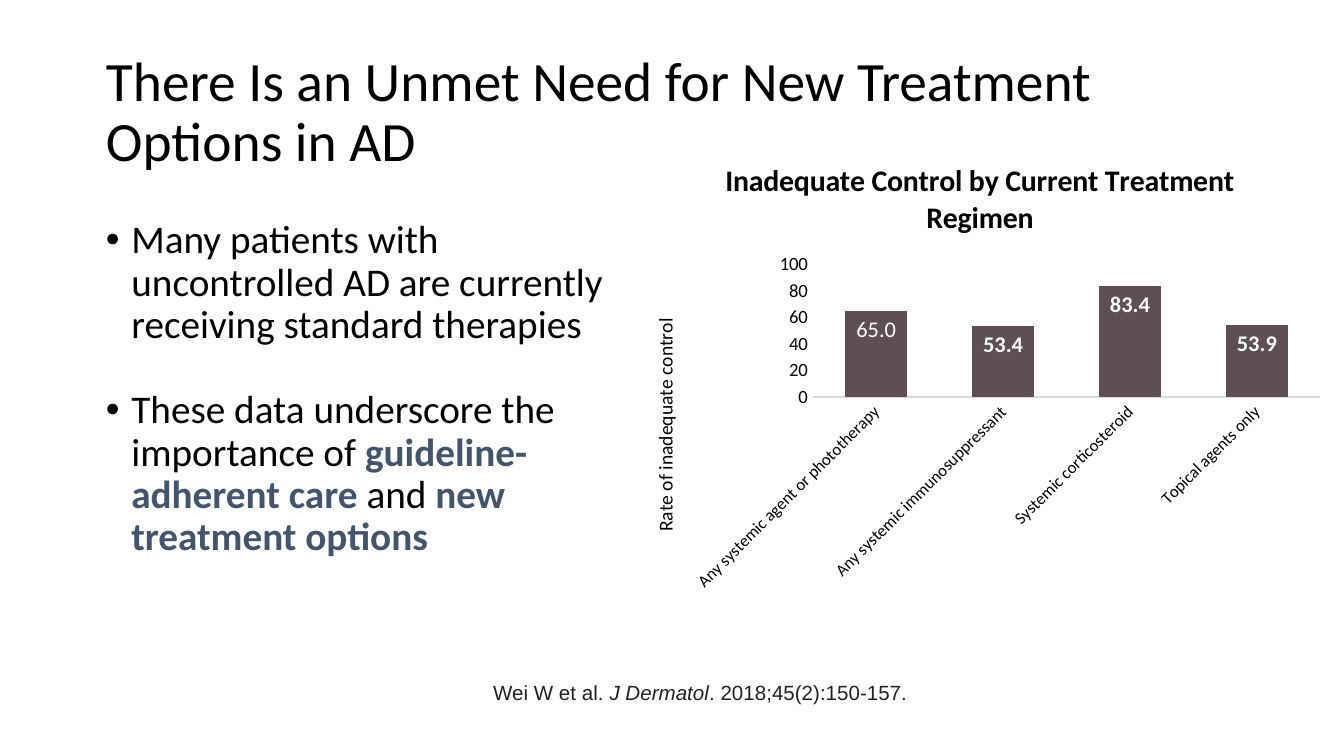
import pptx
import pptx.chart.data
import pptx.dml.color
import pptx.enum.chart
import pptx.enum.text
import pptx.oxml
import pptx.oxml.ns
import pptx.util
from lxml import etree

Pt = pptx.util.Pt
WIDTH = pptx.util.Inches(10)
HEIGHT = WIDTH * 9 // 16
COLS, ROWS = 160, 90
BLACK, SLATE, PLUM = "000000", "44546A", "5D4F53"


def rgb(value):
    """Return the colour for a hex string."""
    return pptx.dml.color.RGBColor.from_string(value)


def style(font, size, color=BLACK, name="Calibri", bold=False, italic=False):
    """Format a font."""
    font.size, font.name, font.bold, font.italic = Pt(size), name, bold, italic
    font.color.rgb = rgb(color)


def grid(box):
    """Turn a box in columns and rows into slide lengths."""
    x, y, w, h = box
    return (int(x * WIDTH / COLS), int(y * HEIGHT / ROWS),
            int(w * WIDTH / COLS), int(h * HEIGHT / ROWS))


def place(sp, box):
    """Place a text shape in a grid box and return its text frame."""
    sp.left, sp.top, sp.width, sp.height = grid(box)
    tf = sp.text_frame
    tf.word_wrap = True
    tf.auto_size = pptx.enum.text.MSO_AUTO_SIZE.NONE
    return tf


def add_runs(p, runs, size, name="Calibri"):
    """Fill a paragraph with (text, colour, bold, italic) runs."""
    p.alignment = pptx.enum.text.PP_ALIGN.LEFT
    p.line_spacing = 0.9
    for text, color, bold, italic in runs:
        r = p.add_run()
        r.text = text
        style(r.font, size, color, name, bold, italic)


def add_bullet(p, indent, char=None):
    """Give a paragraph a hanging bullet, or none."""
    pPr = p._p.get_or_add_pPr()
    pPr.set("marL", str(pptx.util.Inches(indent)))
    pPr.set("indent", str(-pptx.util.Inches(indent)))
    tag = "a:buChar" if char else "a:buNone"
    bullet = etree.SubElement(pPr, pptx.oxml.ns.qn(tag))
    if char:
        bullet.set("char", char)


def fill_title(sp, box, text):
    """Write the slide title."""
    tf = place(sp, box)
    tf.vertical_anchor = pptx.enum.text.MSO_ANCHOR.MIDDLE
    add_runs(tf.paragraphs[0], [(text, BLACK, False, False)], 29.7)


def fill_list(sp, box, items):
    """Write the bulleted list."""
    tf = place(sp, box)
    for i, runs in enumerate(items):
        p = tf.add_paragraph() if i else tf.paragraphs[0]
        add_bullet(p, 0.19, "•")
        p.space_before = Pt(23 if i else 0)
        add_runs(p, runs, 21)


def fill_citation(sp, box, runs):
    """Write the source line."""
    p = place(sp, box).paragraphs[0]
    add_bullet(p, 0)
    p.space_before = Pt(0)
    add_runs(p, runs, 11, "Arial")


def set_layout(parent, after, inner=False, **shares):
    """Fix a chart part at shares of the chart's size."""
    for old in parent.findall(pptx.oxml.ns.qn("c:layout")):
        parent.remove(old)
    modes = {"xMode": "edge", "yMode": "edge", **shares}
    if inner:
        modes = {"layoutTarget": "inner", **modes}
    parts = "".join(f'<c:{k} val="{v}"/>' for k, v in modes.items())
    layout = pptx.oxml.parse_xml(
        f'<c:layout {pptx.oxml.ns.nsdecls("c")}><c:manualLayout>{parts}</c:manualLayout></c:layout>')
    if after is None:
        parent.insert(0, layout)
    else:
        parent.find(pptx.oxml.ns.qn(after)).addnext(layout)


def write_chart_title(title, text, size, bold, x, y):
    """Write and place a chart or axis title."""
    title.text_frame.text = text
    style(title.text_frame.paragraphs[0].runs[0].font, size, bold=bold)
    set_layout(title._element, "c:tx", x=x, y=y)


def format_axes(chart):
    """Format both axes of the column chart."""
    ticks = pptx.enum.chart.XL_TICK_MARK.NONE
    cat, val = chart.category_axis, chart.value_axis
    for axis, size in ((cat, 9), (val, 10)):
        axis.has_major_gridlines = False
        axis.major_tick_mark = axis.minor_tick_mark = ticks
        style(axis.tick_labels.font, size)
    cat.format.line.color.rgb = rgb("D9D9D9")
    cat.format.line.width = Pt(0.75)
    body = cat._element.find(pptx.oxml.ns.qn("c:txPr")).find(pptx.oxml.ns.qn("a:bodyPr"))
    body.set("rot", str(-45 * 60000))
    val.format.line.fill.background()
    val.minimum_scale, val.maximum_scale, val.major_unit = 0, 100, 20
    write_chart_title(val.axis_title, "Rate of inadequate control", 10.5, False, 0.04, 0.38)


def format_columns(plot):
    """Format the columns and their labels."""
    plot.gap_width, plot.overlap, plot.vary_by_categories = 106, -27, False
    series = plot.series[0]
    series.format.fill.solid()
    series.format.fill.fore_color.rgb = rgb(PLUM)
    inside = pptx.enum.chart.XL_LABEL_POSITION.INSIDE_END
    labels = series.data_labels
    labels.show_value, labels.position = True, inside
    labels.number_format, labels.number_format_is_linked = "0.0", False
    style(labels.font, 12, "FFFFFF", bold=True)
    first = series.points[0].data_label
    first.text_frame.text = "65.0"
    style(first.text_frame.paragraphs[0].runs[0].font, 12, "FFFFFF")
    first.position = inside


def add_control_chart(s, box, title, values):
    """Add the column chart of inadequate control."""
    data = pptx.chart.data.CategoryChartData()
    data.categories = list(values)
    data.add_series("Series 1", list(values.values()))
    chart = s.shapes.add_chart(
        pptx.enum.chart.XL_CHART_TYPE.COLUMN_CLUSTERED, *grid(box), data).chart
    style(chart.font, 10)
    chart.has_legend = False
    chart.has_title = True
    write_chart_title(chart.chart_title, title, 16, True, 0.14, 0.03)
    format_axes(chart)
    format_columns(chart.plots[0])
    plot_area = chart._chartSpace.chart.plotArea
    set_layout(plot_area, None, True, x=0.27, y=0.27, w=0.71, h=0.29)


def main():
    """Build the slide."""
    prs = pptx.Presentation()
    prs.slide_width, prs.slide_height = WIDTH, HEIGHT
    s = prs.slides.add_slide(prs.slide_layouts[3])
    title, points, citation = s.placeholders
    fill_title(title, (11, 4.8, 138, 17.4),
               "There Is an Unmet Need for New Treatment Options in AD")
    fill_list(points, (11, 25.4, 66.6, 48), [
        [("Many patients with uncontrolled AD are currently receiving standard therapies",
          BLACK, False, False)],
        [("These data underscore the importance of ", BLACK, False, False),
         ("guideline-adherent care ", SLATE, True, False),
         ("and", BLACK, False, False),
         (" new treatment options", SLATE, True, False)]])
    fill_citation(citation, (57.1, 80.5, 100.6, 8), [
        ("Wei W et al. ", "212121", False, False),
        ("J Dermatol", "212121", False, True),
        (". 2018;45(2):150-157.", "212121", False, False)])
    add_control_chart(s, (73.8, 16.8, 85.1, 54.4), "Inadequate Control by Current Treatment Regimen", {
        "Any systemic agent or phototherapy": 65,
        "Any systemic immunosuppressant": 53.4,
        "Systemic corticosteroid": 83.4,
        "Topical agents only": 53.9})
    prs.save("out.pptx")


if __name__ == "__main__":
    main()
